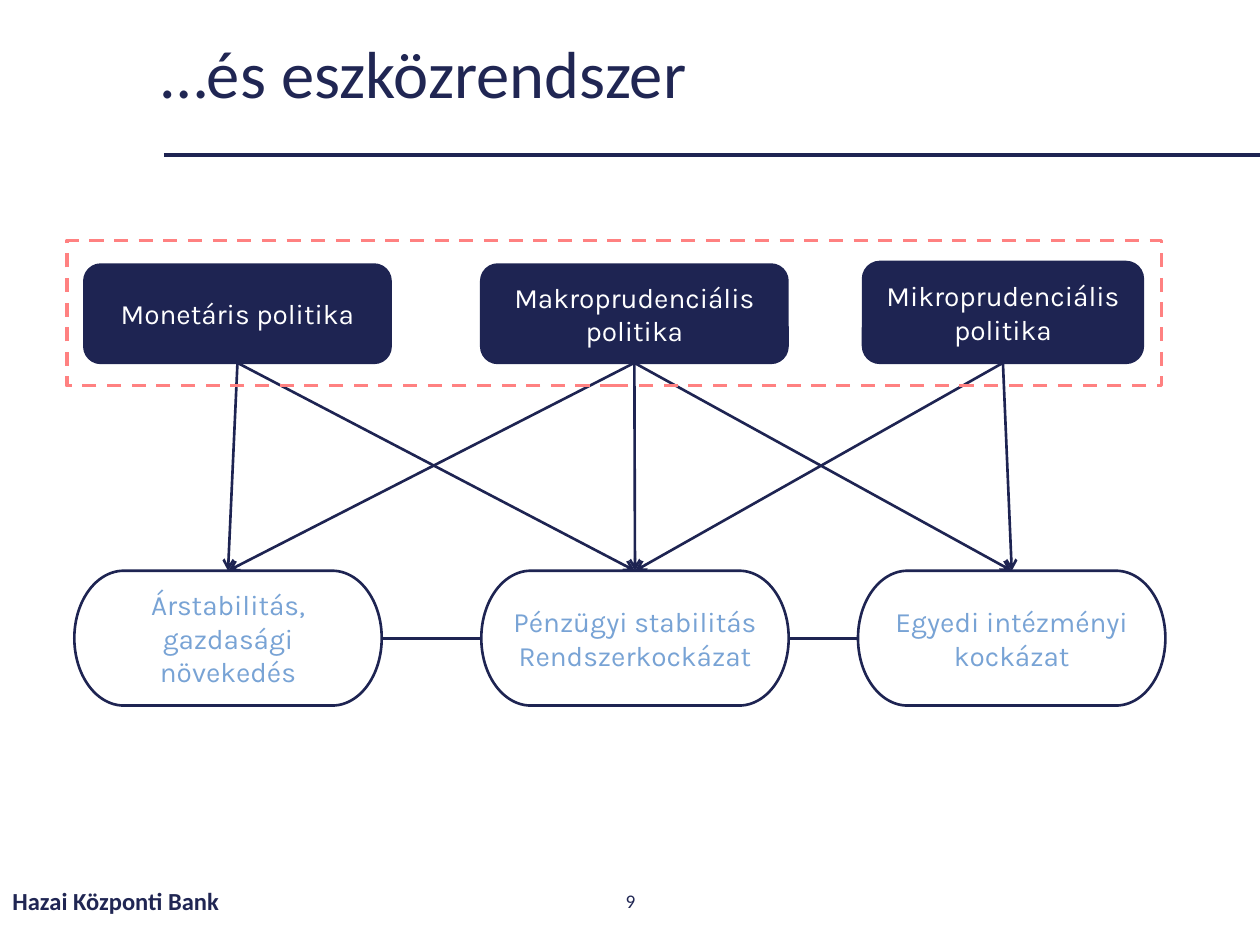
from lxml import etree
from pptx import Presentation
from pptx.dml.color import RGBColor
from pptx.enum.dml import MSO_LINE
from pptx.enum.shapes import MSO_CONNECTOR, MSO_SHAPE as SHAPE
from pptx.enum.text import MSO_ANCHOR as ANCHOR, PP_ALIGN as ALIGN
from pptx.oxml.ns import qn
from pptx.util import Inches, Pt

COLORS = {"navy": "1E2452", "text": "202653", "blue": "78A3D5",
          "white": "FFFFFF", "coral": "FF8181"}

LABELS = [
    (["…és eszközrendszer"], (1.18, 0.2, 8.19, 0.83), ALIGN.LEFT, {"size": Pt(38)}),
    (["Hazai Központi Bank"], (0, 6.95, 3.38, 0.4), ALIGN.LEFT,
     {"size": Pt(14), "bold": True}),
    (["9"], (3.88, 6.95, 2.25, 0.4), ALIGN.CENTER, {"size": Pt(11)}),
]
POLICIES = [
    (["Monetáris politika"], (0.67, 2.1, 2.43, 0.78)),
    (["Makroprudenciális politika"], (3.82, 2.1, 2.43, 0.78)),
    (["Mikroprudenciális politika"], (6.85, 2.08, 2.22, 0.8)),
]
GOALS = [
    (["Árstabilitás, gazdasági növekedés"], (0.59, 4.53, 2.44, 1.07)),
    (["Pénzügyi stabilitás", "Rendszerkockázat"], (3.82, 4.53, 2.44, 1.07)),
    (["Egyedi intézményi kockázat"], (6.81, 4.53, 2.44, 1.07)),
]
LINKS = [(0, 0), (0, 1), (1, 0), (1, 1), (1, 2), (2, 1), (2, 2)]
FRAME = (0.53, 1.91, 8.69, 1.15)


def rgb(name):
    return RGBColor.from_string(COLORS[name])


def write(s, lines, color, align, **font):
    tf = s.text_frame
    tf.word_wrap = True
    tf.vertical_anchor = ANCHOR.MIDDLE
    for i, line in enumerate(lines):
        p = tf.add_paragraph() if i else tf.paragraphs[0]
        p.alignment = align
        r = p.add_run()
        r.text = line
        r.font.color.rgb = rgb(color)
        for key, value in font.items():
            setattr(r.font, key, value)


def add_shape(sp, kind, box, fill, line="navy", width=1.5):
    s = sp.add_shape(kind, *map(Inches, box))
    s.shadow.inherit = False
    if fill:
        s.fill.solid()
        s.fill.fore_color.rgb = rgb(fill)
    else:
        s.fill.background()
    s.line.color.rgb = rgb(line)
    s.line.width = Pt(width)
    return s


def add_line(sp, start, end, width=1.5, arrow=False):
    s = sp.add_connector(MSO_CONNECTOR.STRAIGHT, *map(Inches, start + end))
    s.line.color.rgb = rgb("navy")
    s.line.width = Pt(width)
    if arrow:
        etree.SubElement(s.line._get_or_add_ln(), qn("a:tailEnd"), type="arrow")
    etree.SubElement(s._element.spPr, qn("a:effectLst"))


def add_boxes(sp, items, kind, fill, color):
    for lines, box in items:
        s = add_shape(sp, kind, box, fill)
        write(s, lines, color, ALIGN.CENTER, name="Karla", size=Pt(16))


def bottom(box):
    x, y, w, h = box
    return x + w / 2, y + h


def top(box):
    x, y, w, h = box
    return x + w / 2, y


def main():
    prs = Presentation()
    prs.slide_width, prs.slide_height = Inches(10), Inches(7.5)
    sp = prs.slides.add_slide(prs.slide_layouts[6]).shapes

    add_line(sp, (1.3, 1.23), (10, 1.23), 2.25)
    for lines, box, align, font in LABELS:
        s = sp.add_textbox(*map(Inches, box))
        write(s, lines, "text", align, name="Calibri", **font)
    sp[1].text_frame.paragraphs[0].line_spacing = 0.9

    add_line(sp, (1.81, 5.07), (8.15, 5.07))
    add_boxes(sp, POLICIES, SHAPE.FLOWCHART_ALTERNATE_PROCESS, "navy", "white")
    add_boxes(sp, GOALS, SHAPE.FLOWCHART_TERMINATOR, "white", "blue")
    for policy, goal in LINKS:
        add_line(sp, bottom(POLICIES[policy][1]), top(GOALS[goal][1]), arrow=True)

    frame = add_shape(sp, SHAPE.RECTANGLE, FRAME, None, "coral", 2)
    frame.line.dash_style = MSO_LINE.DASH
    prs.save("out.pptx")


if __name__ == "__main__":
    main()
